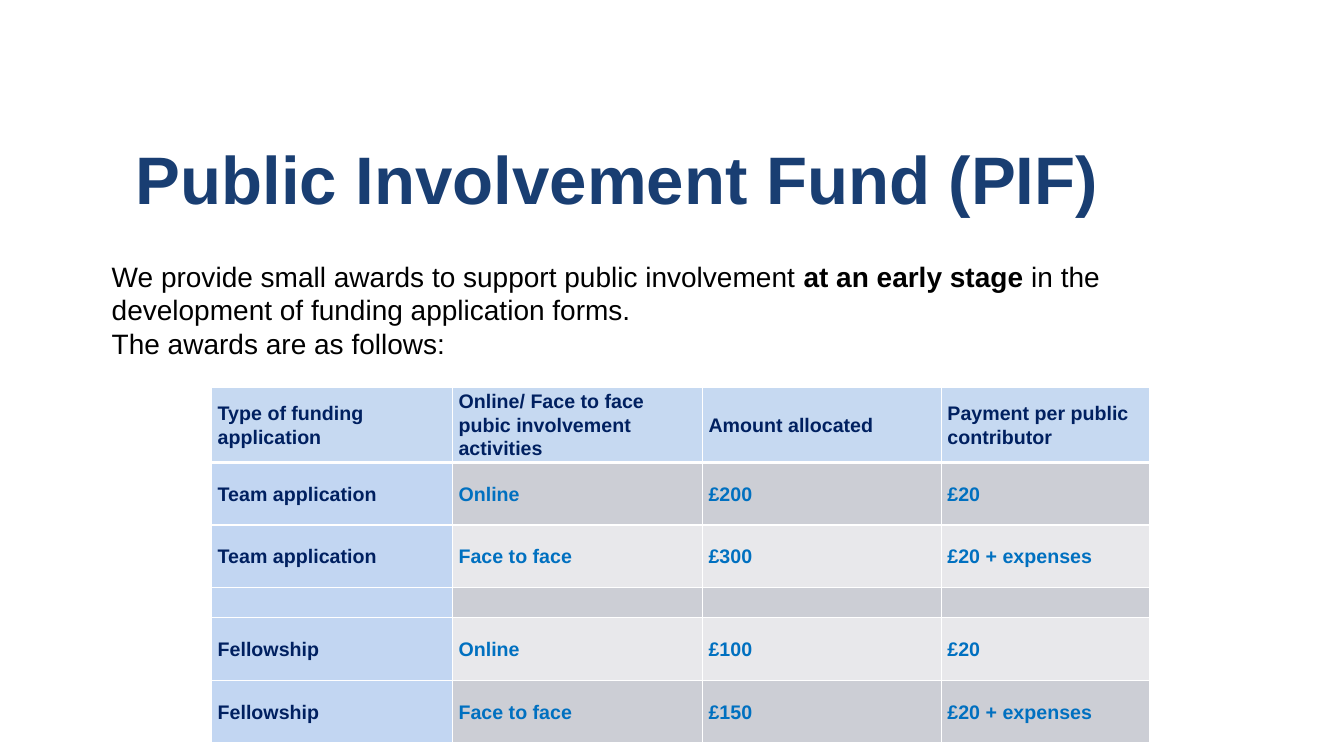
from lxml.etree import SubElement
from pptx import Presentation
from pptx.dml.color import RGBColor
from pptx.enum.text import MSO_ANCHOR
from pptx.oxml.ns import qn
from pptx.util import Pt

COLORS = {
    "title": "193E72", "text": "000000", "navy": "002060", "blue": "0070C0",
    "header": "C6D9F1", "first_col": "C2D6F2", "dark_band": "CCCED5",
    "light_band": "E8E8EB", "border": "FFFFFF",
}
FONT = "Arial"
COL_WIDTHS = [172.08, 178.56, 170.64, 149.04]
ROW_HEIGHTS = [49.68, 44.64, 44.64, 20.88, 44.64, 44.64]
AWARDS = [
    ["Type of funding application", "Online/ Face to face pubic involvement activities",
     "Amount allocated", "Payment per public contributor"],
    ["Team application", "Online", "£200", "£20"],
    ["Team application", "Face to face", "£300", "£20 + expenses"],
    ["", "", "", ""],
    ["Fellowship", "Online", "£100", "£20"],
    ["Fellowship", "Face to face", "£150", "£20 + expenses"],
]


def add_run(p, text, size=20, color="text", bold=False):
    r = p.add_run()
    r.text = text
    r.font.name = FONT
    r.font.size = Pt(size)
    r.font.bold = bold
    r.font.color.rgb = RGBColor.from_string(COLORS[color])


class SlideBuilder:
    """Holds the current slide and adds styled elements to it."""

    def __init__(self, slide):
        self.slide = slide

    def text(self, x, y, w, h, paragraphs, spacing=1.0, **style):
        tf = self.slide.shapes.add_textbox(Pt(x), Pt(y), Pt(w), Pt(h)).text_frame
        tf.word_wrap = True
        for i, runs in enumerate(paragraphs):
            p = tf.add_paragraph() if i else tf.paragraphs[0]
            p.line_spacing = spacing
            for text, bold in runs:
                add_run(p, text, bold=bold, **style)

    def borders(self, cell, **widths):
        tc_pr = cell._tc.get_or_add_tcPr()
        for side in "LRTB":
            width = Pt(widths.get(side, 1))
            ln = SubElement(tc_pr, qn(f"a:ln{side}"), w=str(width))
            fill = SubElement(ln, qn("a:solidFill"))
            SubElement(fill, qn("a:srgbClr"), val=COLORS["border"])

    def cell(self, cell, text, fill, color):
        cell.margin_left = cell.margin_right = Pt(4.32)
        cell.margin_top = cell.margin_bottom = 0
        cell.vertical_anchor = MSO_ANCHOR.MIDDLE
        cell.fill.solid()
        cell.fill.fore_color.rgb = RGBColor.from_string(COLORS[fill])
        if text:
            p = cell.text_frame.paragraphs[0]
            p.line_spacing = 1.07
            add_run(p, text, size=14, color=color, bold=True)

    def table(self, x, y, col_widths, row_heights, rows):
        table = self.slide.shapes.add_table(
            len(rows), len(col_widths), Pt(x), Pt(y),
            Pt(sum(col_widths)), Pt(sum(row_heights))).table
        for col, width in zip(table.columns, col_widths):
            col.width = Pt(width)
        for i, (row, height) in enumerate(zip(rows, row_heights)):
            table.rows[i].height = Pt(height)
            for j, text in enumerate(row):
                if i == 0:
                    fill = "header"
                elif j == 0:
                    fill = "first_col"
                else:
                    fill = "dark_band" if i % 2 else "light_band"
                color = "blue" if i and j else "navy"
                cell = table.cell(i, j)
                self.borders(cell, T=3 if i == 1 else 1, B=3 if i == 0 else 1)
                self.cell(cell, text, fill, color)


def main():
    prs = Presentation()
    prs.slide_width, prs.slide_height = Pt(960), Pt(540)
    builder = SlideBuilder(prs.slides.add_slide(prs.slide_layouts[6]))
    builder.text(90, 101, 720, 57, [[("Public Involvement Fund (PIF)", True)]],
                 spacing=0.9, size=48, color="title")
    builder.text(72.72, 181.44, 753.84, 79.92, [
        [("We provide small awards to support public involvement ", False),
         ("at an early stage ", True),
         ("in the development of funding application forms.", False)],
        [("The awards are as follows:", False)],
    ])
    builder.table(151.2, 276.48, COL_WIDTHS, ROW_HEIGHTS, AWARDS)
    prs.save("out.pptx")


if __name__ == "__main__":
    main()
